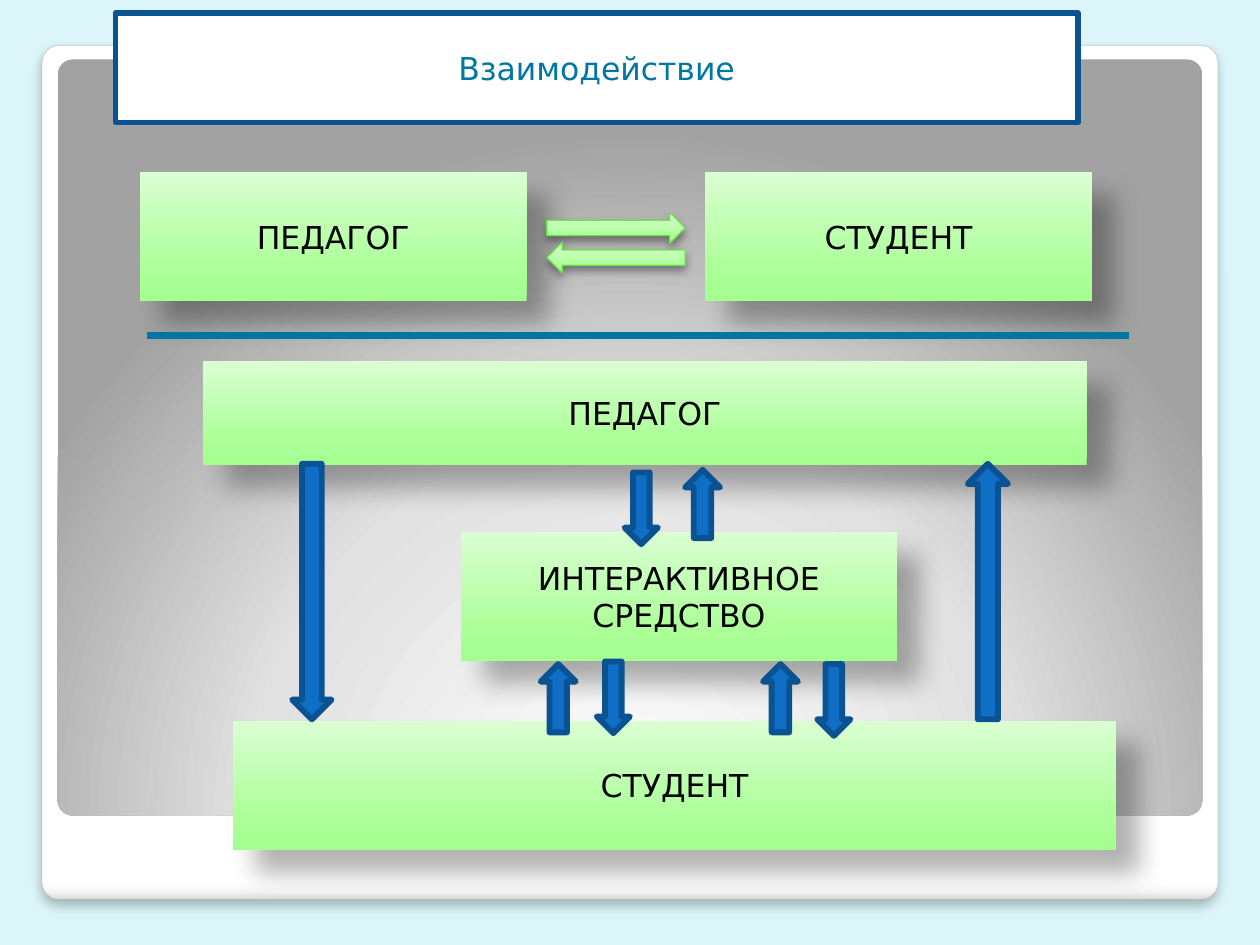
from lxml import etree
from pptx import Presentation
from pptx.dml.color import RGBColor
from pptx.enum import shapes as es, text as et
from pptx.oxml import ns
from pptx.util import Pt

BACKDROP = RGBColor(0xDB, 0xF5, 0xF9)
WHITE = RGBColor(0xFF, 0xFF, 0xFF)
BLACK = RGBColor(0x00, 0x00, 0x00)
TEAL = RGBColor(0x00, 0x76, 0xA3)
BLUE = RGBColor(0x0F, 0x6F, 0xC6)
NAVY = RGBColor(0x0B, 0x52, 0x92)
LIME = RGBColor(0x6F, 0xE4, 0x48)
GRAY = RGBColor(0xA4, 0xA4, 0xA4)
LIGHT_GRAY = RGBColor(0xF7, 0xF7, 0xF7)
EDGE_GRAY = RGBColor(0xDA, 0xDA, 0xDA)
MID_GRAY = RGBColor(0xE1, 0xE1, 0xE1)
DARK_GRAY = RGBColor(0xA2, 0xA2, 0xA2)
GREEN = RGBColor(0xA4, 0xFF, 0x8F)
SOFT_GREEN = RGBColor(0xAC, 0xFF, 0x99)
PALE_GREEN = RGBColor(0xDA, 0xFF, 0xD2)

GREEN_STOPS = [(0, GREEN), (25, SOFT_GREEN), (100, PALE_GREEN)]
FRAME_STOPS = [(0, WHITE), (98, WHITE), (99, LIGHT_GRAY), (100, EDGE_GRAY)]
PANEL_STOPS = [(0, WHITE), (55, MID_GRAY), (100, DARK_GRAY)]
FRAME_SHADOW = (25, 6, 4, 90)
BOX_SHADOW = (30, 15, 18, 45)
EXCHANGE_SHADOW = (40, 5.2, 3, 90)

KIND = es.MSO_SHAPE
UP, DOWN = KIND.UP_ARROW, KIND.DOWN_ARROW
FONT = {"name": "DejaVu Sans", "size": Pt(18), "bold": False}


def sub(parent, tag, **attributes):
    return etree.SubElement(parent, ns.qn(tag), attributes)


def set_gradient(shape, stops, angle=None):
    gradient = etree.Element(ns.qn("a:gradFill"), rotWithShape="1")
    stop_list = sub(gradient, "a:gsLst")
    for position, color in stops:
        stop = sub(stop_list, "a:gs", pos=str(position * 1000))
        sub(stop, "a:srgbClr", val=str(color))
    if angle is None:
        circle = sub(gradient, "a:path", path="circle")
        sub(circle, "a:fillToRect", l="50000", t="175000", r="50000", b="-75000")
    else:
        sub(gradient, "a:lin", ang=str(angle * 60000), scaled="0")
    shape._element.spPr.find(ns.qn("a:prstGeom")).addnext(gradient)


def set_shadow(shape, alpha, blur, distance, angle):
    effects = shape._element.spPr.find(ns.qn("a:effectLst"))
    shadow = sub(effects, "a:outerShdw", blurRad=str(Pt(blur)), dist=str(Pt(distance)),
                 dir=str(angle * 60000), algn="tl", rotWithShape="0")
    color = sub(shadow, "a:srgbClr", val=str(BLACK))
    sub(color, "a:alpha", val=str(alpha * 1000))


def set_line(shape, color, width):
    shape.line.color.rgb = color
    shape.line.width = Pt(width)


def add_part(slide, kind, box):
    part = slide.shapes.add_shape(kind, *map(Pt, box))
    part.shadow.inherit = False
    part.line.fill.background()
    return part


def write(shape, wording, color):
    frame = shape.text_frame
    for key, value in {"word_wrap": True, "vertical_anchor": et.MSO_ANCHOR.MIDDLE}.items():
        setattr(frame, key, value)
    frame.text = wording
    paragraph = frame.paragraphs[0]
    paragraph.alignment = et.PP_ALIGN.CENTER
    for key, value in FONT.items():
        setattr(paragraph.font, key, value)
    paragraph.font.color.rgb = color


def backdrop(slide, left, top, width, height):
    fill = slide.background.fill
    fill.solid()
    fill.fore_color.rgb = BACKDROP
    frame = add_part(slide, KIND.ROUNDED_RECTANGLE, (left, top, width, height))
    set_gradient(frame, FRAME_STOPS, 90)
    set_line(frame, GRAY, 0.16)
    set_shadow(frame, *FRAME_SHADOW)
    panel = add_part(slide, KIND.ROUNDED_RECTANGLE, (left + 9, top + 8, width - 18, 432))
    set_gradient(panel, PANEL_STOPS)
    for plate in (frame, panel):
        plate.adjustments[0] = 0.02


def heading(slide, left, top, width, height):
    title = slide.shapes.title
    for key, value in zip(("left", "top", "width", "height"), (left, top, width, height)):
        setattr(title, key, Pt(value))
    title.fill.solid()
    title.fill.fore_color.rgb = WHITE
    set_line(title, NAVY, 3.35)
    write(title, "Взаимодействие", TEAL)
    title._element.getparent().append(title._element)


def role_box(slide, wording, box):
    role = add_part(slide, KIND.RECTANGLE, box)
    set_gradient(role, GREEN_STOPS, 270)
    set_shadow(role, *BOX_SHADOW)
    write(role, wording, BLACK)


def direct_exchange(slide, left, top, width, height):
    role_width = 221
    role_box(slide, "ПЕДАГОГ", (left, top, role_width, height))
    role_box(slide, "СТУДЕНТ", (left + width - role_width, top, role_width, height))
    for row, kind in enumerate((KIND.RIGHT_ARROW, KIND.LEFT_ARROW)):
        box = (left + (width - 79) / 2, top + 23 + 17 * row, 79, 17.5)
        arrow = add_part(slide, kind, box)
        set_gradient(arrow, GREEN_STOPS, 270)
        set_line(arrow, LIME, 0.75)
        set_shadow(arrow, *EXCHANGE_SHADOW)


def divider(slide, left, top, width):
    rule = slide.shapes.add_connector(
        es.MSO_CONNECTOR.STRAIGHT, Pt(left), Pt(top), Pt(left + width), Pt(top))
    set_line(rule, TEAL, 4)
    sub(rule._element.spPr, "a:effectLst")


def mediated_exchange(slide, left, top, width, height):
    role_width, role_height = 505, 73.5
    role_box(slide, "ПЕДАГОГ", (left, top, role_width, 59))
    role_box(slide, "ИНТЕРАКТИВНОЕ СРЕДСТВО", (left + 147.5, top + 97.5, 249, role_height))
    role_box(slide, "СТУДЕНТ", (left + width - role_width, top + height - role_height,
                                role_width, role_height))
    flows = [
        (DOWN, 51, 58.5, 22.5, 146), (UP, 437, 58.5, 23, 146),
        (DOWN, 241, 63.5, 19, 41), (UP, 275.5, 62, 20, 39),
        (UP, 193, 173, 20, 39), (DOWN, 225, 171.5, 19, 41),
        (UP, 320, 173, 20, 39), (DOWN, 351, 173, 19, 41),
    ]
    for kind, dx, dy, flow_width, flow_height in flows:
        flow = add_part(slide, kind, (left + dx, top + dy, flow_width, flow_height))
        flow.fill.solid()
        flow.fill.fore_color.rgb = BLUE
        set_line(flow, NAVY, 3.35)


def main():
    deck = Presentation()
    deck.slide_width, deck.slide_height = Pt(720), Pt(540)
    slide = deck.slides.add_slide(deck.slide_layouts[5])
    backdrop(slide, 24, 26, 672, 488)
    direct_exchange(slide, 80, 98.5, 544, 73.5)
    divider(slide, 84, 191.5, 561)
    mediated_exchange(slide, 116, 206.5, 522, 279)
    heading(slide, 66, 7.5, 550, 62.5)
    deck.save("out.pptx")


if __name__ == "__main__":
    main()
